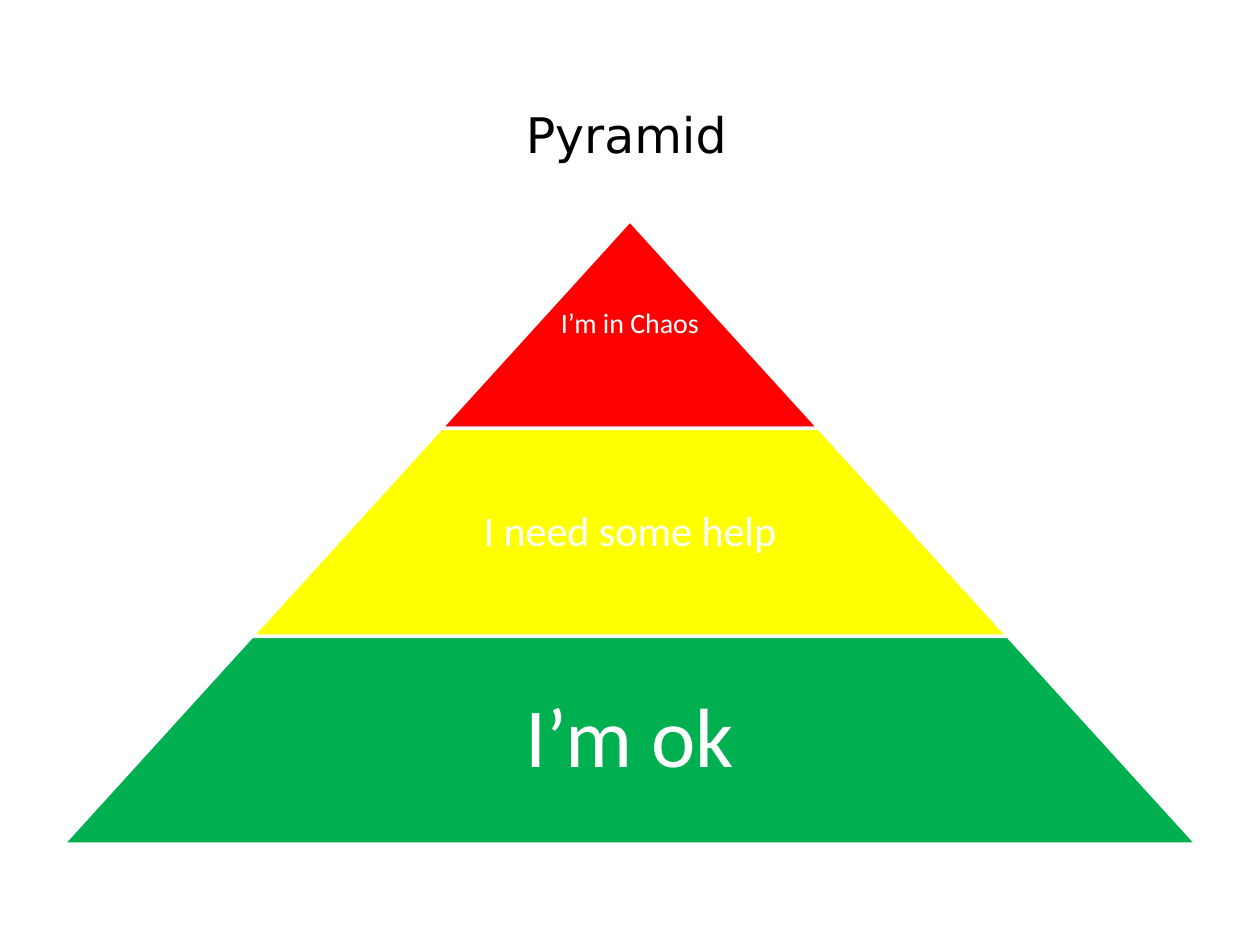
import pptx
import pptx.dml.color
import pptx.enum.shapes
import pptx.enum.text
import pptx.util

TIERS = [
    ("I’m in Chaos", "FF0000", 16, 1),
    ("I need some help", "FFFF00", 24, 0.65),
    ("I’m ok", "00B050", 48, 0.65),
]


def color(value):
    """Turn a hex string into a colour."""
    return pptx.dml.color.RGBColor.from_string(value)


def inches(*lengths):
    """Turn numbers of inches into lengths."""
    return [pptx.util.Inches(length) for length in lengths]


def add_label(page, box, text, font, size, ink, inset):
    """Place one centred line of text in the box."""
    label = page.shapes.add_textbox(*inches(*box))
    frame = label.text_frame
    frame.word_wrap = True
    frame.vertical_anchor = pptx.enum.text.MSO_ANCHOR.MIDDLE
    frame.margin_left = frame.margin_right = inset
    frame.margin_top = frame.margin_bottom = inset
    para = frame.paragraphs[0]
    para.text = text
    para.alignment = pptx.enum.text.PP_ALIGN.CENTER
    para.font.name = font
    para.font.size = pptx.util.Pt(size)
    para.font.color.rgb = color(ink)
    return para


def add_tier(page, box, slant, fill):
    """Draw one trapezoid slice whose sides lean in by the slant."""
    tier = page.shapes.add_shape(
        pptx.enum.shapes.MSO_SHAPE.TRAPEZOID, *inches(*box))
    tier.adjustments[0] = slant / box[3]
    tier.shadow.inherit = False
    tier.fill.solid()
    tier.fill.fore_color.rgb = color(fill)
    tier.line.color.rgb = color("FFFFFF")
    tier.line.width = pptx.util.Pt(2)


def add_pyramid(page, box, tiers):
    """Stack the tiers from the tip down to fill the box."""
    left, top, width, height = box
    row = height / len(tiers)
    slant = width / len(tiers) / 2
    center = left + width / 2
    for index, (text, fill, size, share) in enumerate(tiers):
        base = 2 * slant * (index + 1)
        y = top + index * row
        add_tier(page, (center - base / 2, y, base, row), slant, fill)
        span = base * share
        para = add_label(page, (center - span / 2, y, span, row), text,
                         "Calibri", size, "FFFFFF", pptx.util.Pt(size / 10))
        para.line_spacing = 0.9


def main():
    """Build the deck and save it."""
    deck = pptx.Presentation()
    deck.slide_width, deck.slide_height = inches(10, 7.5)
    page = deck.slides.add_slide(deck.slide_layouts[6])
    add_label(page, (0.47, 0.76, 9, 0.61), "Pyramid", "DejaVu Sans", 28,
              "000000", pptx.util.Inches(0.05))
    add_pyramid(page, (0.5, 1.75, 9, 4.95), TIERS)
    deck.save("out.pptx")


if __name__ == "__main__":
    main()
